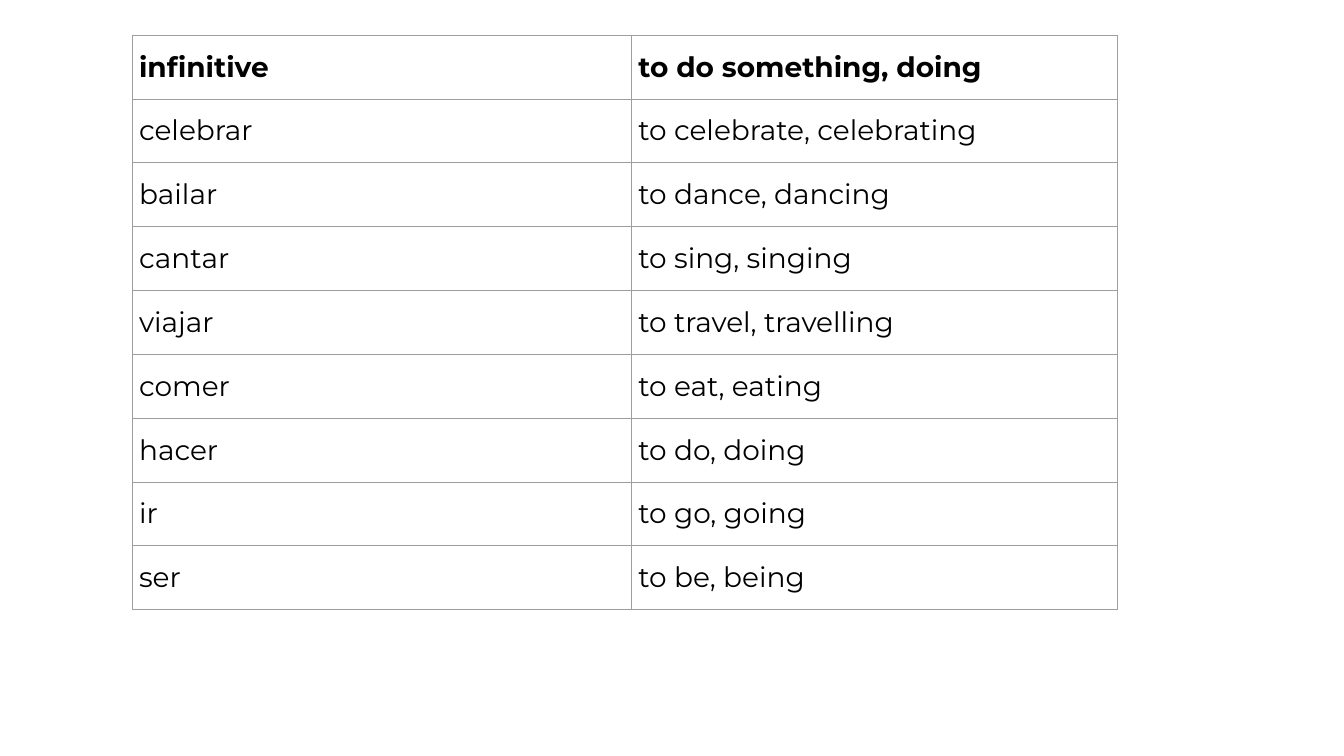
from lxml import etree
from pptx import Presentation
from pptx.dml.color import RGBColor
from pptx.enum.text import MSO_ANCHOR
from pptx.oxml.ns import qn
from pptx.util import Pt

MIDDLE = MSO_ANCHOR.MIDDLE
BLACK = RGBColor(0x00, 0x00, 0x00)
BORDER_GREY = RGBColor(0x9E, 0x9E, 0x9E)
BORDER_WIDTH = Pt(0.75)
BORDER_TAGS = ("a:lnL", "a:lnR", "a:lnT", "a:lnB")

COLUMN_WIDTHS = (Pt(535), Pt(520))
ROW_HEIGHT = Pt(68.4)
INSET = Pt(7.2)

CELL_FORMAT = {
    "vertical_anchor": MIDDLE,
    "margin_left": INSET,
    "margin_right": INSET,
    "margin_top": INSET,
    "margin_bottom": INSET,
}
FONT_FORMAT = {"name": "Montserrat", "size": Pt(30)}

VERBS = [
    ("infinitive", "to do something, doing"),
    ("celebrar", "to celebrate, celebrating"),
    ("bailar", "to dance, dancing"),
    ("cantar", "to sing, singing"),
    ("viajar", "to travel, travelling"),
    ("comer", "to eat, eating"),
    ("hacer", "to do, doing"),
    ("ir", "to go, going"),
    ("ser", "to be, being"),
]


def apply_format(target, values):
    for name, value in values.items():
        setattr(target, name, value)


def add_borders(cell):
    properties = cell._tc.get_or_add_tcPr()
    for tag in BORDER_TAGS:
        border = etree.SubElement(properties, qn(tag), w=str(BORDER_WIDTH))
        fill = etree.SubElement(border, qn("a:solidFill"))
        etree.SubElement(fill, qn("a:srgbClr"), val=str(BORDER_GREY))


def fill_cell(cell, text, bold):
    apply_format(cell, CELL_FORMAT)
    add_borders(cell)
    cell.fill.background()
    cell.text = text
    font = cell.text_frame.paragraphs[0].runs[0].font
    apply_format(font, FONT_FORMAT)
    font.bold = bold
    font.color.rgb = BLACK


def add_verb_table(slide, left, top, widths, row_height):
    table = slide.shapes.add_table(
        len(VERBS), len(widths), left, top, sum(widths), row_height * len(VERBS)
    ).table
    apply_format(table, {"first_row": False, "horz_banding": False})
    for column, width in zip(table.columns, widths):
        column.width = width
    for index, (row, texts) in enumerate(zip(table.rows, VERBS)):
        row.height = row_height
        for cell, text in zip(row.cells, texts):
            fill_cell(cell, text, bold=index == 0)


def main():
    presentation = Presentation()
    presentation.slide_width = Pt(1440)
    presentation.slide_height = Pt(810)
    blank_layout = presentation.slide_layouts[6]
    slide = presentation.slides.add_slide(blank_layout)
    add_verb_table(slide, Pt(141.8), Pt(37.6), COLUMN_WIDTHS, ROW_HEIGHT)
    presentation.save("out.pptx")


if __name__ == "__main__":
    main()
